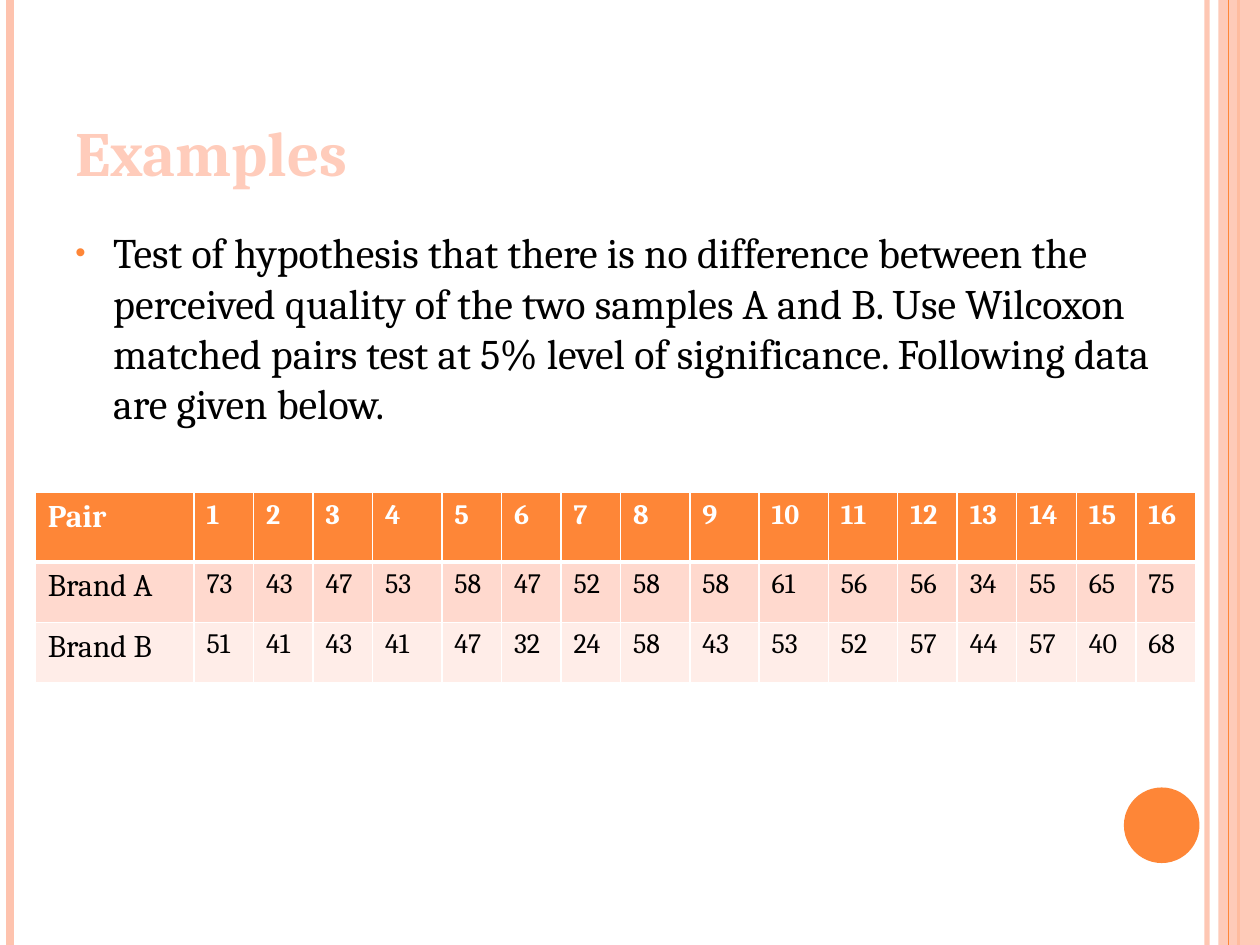
from typing import NamedTuple, Optional

from lxml import etree
from pptx import Presentation
from pptx.dml.color import RGBColor
from pptx.enum import shapes, text
from pptx.oxml import ns
from pptx.util import Inches, Pt

ORANGE = RGBColor(0xFE, 0x86, 0x37)
PEACH = RGBColor(0xFE, 0xC3, 0xAE)
TITLE_PEACH = RGBColor(0xFF, 0xCC, 0xBB)
BAND_DARK = RGBColor(0xFF, 0xD9, 0xCE)
BAND_LIGHT = RGBColor(0xFF, 0xED, 0xE8)
WHITE = RGBColor(0xFF, 0xFF, 0xFF)
BLACK = RGBColor(0, 0, 0)
FONT = "Cambria"
SLIDE_HEIGHT = 7.5


class Stripe(NamedTuple):
    x: float
    color: RGBColor
    weight: float
    opacity: int = 100


class Block(NamedTuple):
    preset: shapes.MSO_SHAPE
    box: tuple
    color: RGBColor
    opacity: int = 100


class Row(NamedTuple):
    label: str
    values: list
    height: float
    fill: RGBColor
    color: RGBColor = BLACK
    bold: bool = False
    rule_above: float = 1
    rule_below: float = 1


DECORATIONS = [
    Stripe(9.58, PEACH, 3, 93),
    Stripe(0.08, PEACH, 4.5),
    Stripe(9.83, ORANGE, 1.5),
    Block(shapes.MSO_SHAPE.RECTANGLE, (9.67, 0, 0.33, SLIDE_HEIGHT), PEACH, 87),
    Stripe(9.75, ORANGE, 0.75),
    Block(shapes.MSO_SHAPE.OVAL, (8.92, 6.25, 0.6, 0.6), ORANGE),
]

QUESTION = (
    "Test of hypothesis that there is no difference between the perceived quality "
    "of the two samples A and B. Use Wilcoxon matched pairs test at 5% level of "
    "significance. Following data are given below."
)

ROWS = [
    Row("Pair", list(range(1, 17)), 0.55, ORANGE, WHITE, True, rule_below=3),
    Row("Brand A", [73, 43, 47, 53, 58, 47, 52, 58, 58, 61, 56, 56, 34, 55, 65, 75],
        0.48, BAND_DARK, rule_above=3),
    Row("Brand B", [51, 41, 43, 41, 47, 32, 24, 58, 43, 53, 52, 57, 44, 57, 40, 68],
        0.48, BAND_LIGHT),
]
TABLE_LEFT, TABLE_TOP, TABLE_WIDTH = 0.28, 3.91, 9.21
LABEL_WIDTH, WIDE_WIDTH = 1.26, 0.55
WIDE_PAIRS = {4, 8, 9, 10, 11}


def add_child(parent, tag: str, **attributes: str):
    return etree.SubElement(parent, ns.qn(tag), **attributes)


def set_opacity(properties, percent: int) -> None:
    if percent < 100:
        color = next(properties.iter(ns.qn("a:srgbClr")))
        add_child(color, "a:alpha", val=str(percent * 1000))


def draw_stripe(slide, stripe: Stripe) -> None:
    x = Inches(stripe.x)
    line = slide.shapes.add_connector(
        shapes.MSO_CONNECTOR.STRAIGHT, x, 0, x, Inches(SLIDE_HEIGHT))
    line.line.color.rgb = stripe.color
    line.line.width = Pt(stripe.weight)
    properties = line._element.spPr
    set_opacity(properties, stripe.opacity)
    add_child(properties, "a:effectLst")


def draw_block(slide, block: Block) -> None:
    shape = slide.shapes.add_shape(block.preset, *map(Inches, block.box))
    shape.shadow.inherit = False
    shape.fill.solid()
    shape.fill.fore_color.rgb = block.color
    shape.line.fill.background()
    set_opacity(shape._element.spPr, block.opacity)


def style(paragraph, size: float, color: RGBColor, bold: bool = False) -> None:
    for run in paragraph.runs:
        run.font.name = FONT
        run.font.size = Pt(size)
        run.font.bold = bold
        run.font.color.rgb = color


def draw_text(slide, box: tuple, words: str, size: float, color: RGBColor,
              bold: bool = False, anchor: Optional[text.MSO_ANCHOR] = None):
    frame = slide.shapes.add_textbox(*map(Inches, box)).text_frame
    frame.word_wrap = True
    frame.vertical_anchor = anchor
    frame.text = words
    style(frame.paragraphs[0], size, color, bold)
    return frame.paragraphs[0]


def add_bullet(paragraph, indent: float, color: RGBColor, percent: int) -> None:
    properties = paragraph._p.get_or_add_pPr()
    properties.set("marL", str(Inches(indent)))
    properties.set("indent", str(-Inches(indent)))
    add_child(add_child(properties, "a:buClr"), "a:srgbClr", val=str(color))
    add_child(properties, "a:buSzPct", val=str(percent * 1000))
    add_child(properties, "a:buFont", typeface="Arial")
    add_child(properties, "a:buChar", char="•")


def set_borders(cell, row: Row) -> None:
    properties = cell._tc.get_or_add_tcPr()
    weights = {"a:lnL": 1, "a:lnR": 1, "a:lnT": row.rule_above, "a:lnB": row.rule_below}
    for position, (side, weight) in enumerate(weights.items()):
        border = etree.Element(ns.qn(side), w=str(Pt(weight)))
        add_child(add_child(border, "a:solidFill"), "a:srgbClr", val=str(WHITE))
        properties.insert(position, border)


def draw_table(slide, rows: list) -> None:
    pairs = rows[0].values
    narrow_count = len(pairs) - len(WIDE_PAIRS)
    narrow = (TABLE_WIDTH - LABEL_WIDTH - WIDE_WIDTH * len(WIDE_PAIRS)) / narrow_count
    widths = [LABEL_WIDTH] + [WIDE_WIDTH if p in WIDE_PAIRS else narrow for p in pairs]
    height = sum(row.height for row in rows)
    table = slide.shapes.add_table(
        len(rows), len(widths), Inches(TABLE_LEFT), Inches(TABLE_TOP),
        Inches(TABLE_WIDTH), Inches(height)).table
    for column, width in zip(table.columns, widths):
        column.width = Inches(width)
    for r, row in enumerate(rows):
        table.rows[r].height = Inches(row.height)
        for c, value in enumerate([row.label, *row.values]):
            cell = table.cell(r, c)
            cell.text_frame.text = str(value)
            style(cell.text_frame.paragraphs[0], 16 if c else 18, row.color, row.bold)
            cell.fill.solid()
            cell.fill.fore_color.rgb = row.fill
            set_borders(cell, row)


def main() -> None:
    deck = Presentation()
    deck.slide_width, deck.slide_height = Inches(10), Inches(SLIDE_HEIGHT)
    slide = deck.slides.add_slide(deck.slide_layouts[6])

    # Side stripes and corner circle
    for part in DECORATIONS:
        if isinstance(part, Stripe):
            draw_stripe(slide, part)
        else:
            draw_block(slide, part)

    # Title and question
    draw_text(slide, (0.5, 0.3, 8.17, 1.25), "Examples", 36, TITLE_PEACH, True,
              text.MSO_ANCHOR.BOTTOM)
    question = draw_text(slide, (0.5, 1.75, 8.75, 5.33), QUESTION, 24, BLACK)
    question.space_before = Pt(6)
    add_bullet(question, 0.3, ORANGE, 70)

    # Paired ratings
    draw_table(slide, ROWS)
    deck.save("out.pptx")


if __name__ == "__main__":
    main()
